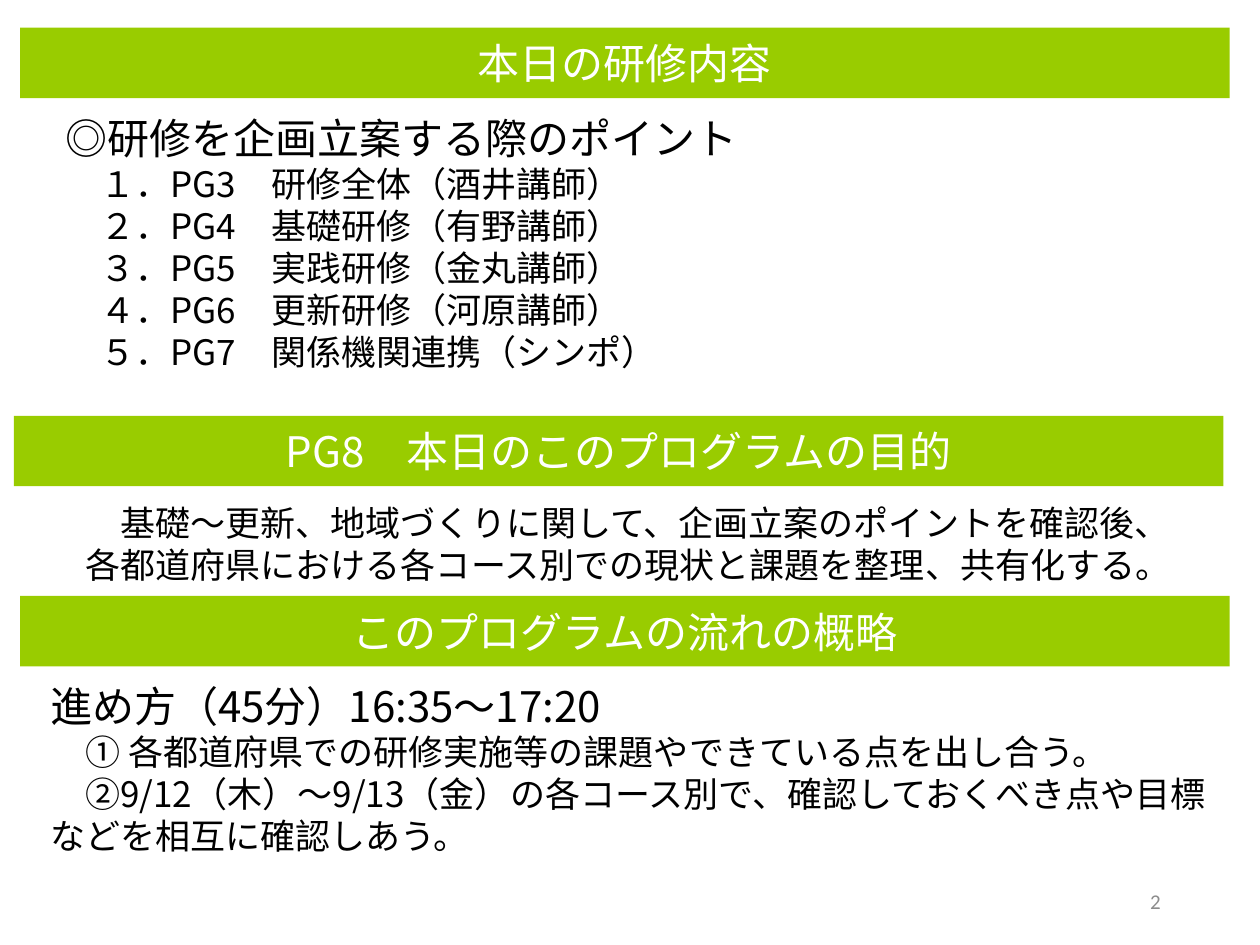
import dataclasses

import lxml.etree
import pptx
import pptx.dml.color
import pptx.enum.shapes
import pptx.enum.text
import pptx.oxml.ns
import pptx.util

CELL = 0.1
COLUMNS, ROWS = 100, 75
JAPANESE, LATIN = "Noto Sans CJK JP", "Calibri"
GREEN, WHITE, BLACK, GRAY = "99CC00", "FFFFFF", "000000", "8C8C8C"
HEADING, BODY, FOOTER = 24, 20, 12
ALIGN = pptx.enum.text.PP_ALIGN
ANCHOR = pptx.enum.text.MSO_ANCHOR


@dataclasses.dataclass(frozen=True)
class Area:
    """A box on the slide, in columns and rows of the grid."""
    column: float
    row: float
    columns: float
    rows: float

    def lengths(self) -> list[int]:
        """Return left, top, width and height."""
        return [pptx.util.Inches(cells * CELL) for cells in dataclasses.astuple(self)]


@dataclasses.dataclass(frozen=True)
class Line:
    """A paragraph with its look."""
    wording: str
    size: int = BODY
    color: str = BLACK
    font: str = JAPANESE
    align: ALIGN = ALIGN.LEFT


@dataclasses.dataclass(frozen=True)
class Section:
    """A banner title with the lines that stand below it."""
    title: str
    banner: Area
    body: Area
    lines: list[Line]


def rgb(value: str) -> pptx.dml.color.RGBColor:
    """Turn a hex string into a colour."""
    return pptx.dml.color.RGBColor.from_string(value)


def write(frame, lines: list[Line], anchor: ANCHOR) -> None:
    """Fill a text frame with lines."""
    frame.word_wrap = True
    frame.vertical_anchor = anchor
    for index, line in enumerate(lines):
        paragraph = frame.add_paragraph() if index else frame.paragraphs[0]
        paragraph.text = line.wording
        paragraph.alignment = line.align
        paragraph.font.size = pptx.util.Pt(line.size)
        paragraph.font.color.rgb = rgb(line.color)
        paragraph.font.name = line.font
        defaults = paragraph._p.pPr.find(pptx.oxml.ns.qn("a:defRPr"))
        lxml.etree.SubElement(defaults, pptx.oxml.ns.qn("a:ea"), typeface=line.font)


def add_text(slide, area: Area, lines: list[Line], anchor: ANCHOR = ANCHOR.TOP) -> None:
    """Add a text box."""
    write(slide.shapes.add_textbox(*area.lengths()).text_frame, lines, anchor)


def add_banner(slide, area: Area, title: str) -> None:
    """Add a green band with a centred title."""
    banner = slide.shapes.add_shape(pptx.enum.shapes.MSO_SHAPE.RECTANGLE, *area.lengths())
    banner.shadow.inherit = False
    banner.fill.solid()
    banner.fill.fore_color.rgb = rgb(GREEN)
    banner.line.fill.background()
    write(banner.text_frame, [Line(title, HEADING, WHITE, align=ALIGN.CENTER)], ANCHOR.MIDDLE)


PROGRAMS = [
    "１．PG3　研修全体（酒井講師）",
    "２．PG4　基礎研修（有野講師）",
    "３．PG5　実践研修（金丸講師）",
    "４．PG6　更新研修（河原講師）",
    "５．PG7　関係機関連携（シンポ）",
]

SECTIONS = [
    Section(
        "本日の研修内容",
        Area(1.6, 2.2, 96, 5.6),
        Area(4.2, 8.4, 93.4, 25.9),
        [Line("◎研修を企画立案する際のポイント", HEADING)]
        + [Line(f"　{program}") for program in PROGRAMS],
    ),
    Section(
        "PG8　本日のこのプログラムの目的",
        Area(1.1, 33, 96, 5.6),
        Area(5.8, 39.3, 93.4, 7.7),
        [
            Line("　基礎～更新、地域づくりに関して、企画立案のポイントを確認後、"),
            Line("各都道府県における各コース別での現状と課題を整理、共有化する。"),
        ],
    ),
    Section(
        "このプログラムの流れの概略",
        Area(1.6, 47.3, 96, 5.6),
        Area(3, 53.5, 94.1, 15.1),
        [
            Line("進め方（45分）16:35～17:20", HEADING),
            Line("　① 各都道府県での研修実施等の課題やできている点を出し合う。"),
            Line("　②9/12（木）～9/13（金）の各コース別で、確認しておくべき点や目標などを相互に確認しあう。"),
        ],
    ),
]


def main() -> None:
    """Build and save the slide."""
    deck = pptx.Presentation()
    deck.slide_width = pptx.util.Inches(COLUMNS * CELL)
    deck.slide_height = pptx.util.Inches(ROWS * CELL)
    slide = deck.slides.add_slide(deck.slide_layouts[6])
    for section in SECTIONS:
        add_banner(slide, section.banner, section.title)
        add_text(slide, section.body, section.lines)
    page_number = Line("2", FOOTER, GRAY, LATIN, ALIGN.RIGHT)
    add_text(slide, Area(70.6, 69.5, 22.5, 4), [page_number], ANCHOR.MIDDLE)
    deck.save("out.pptx")


if __name__ == "__main__":
    main()
